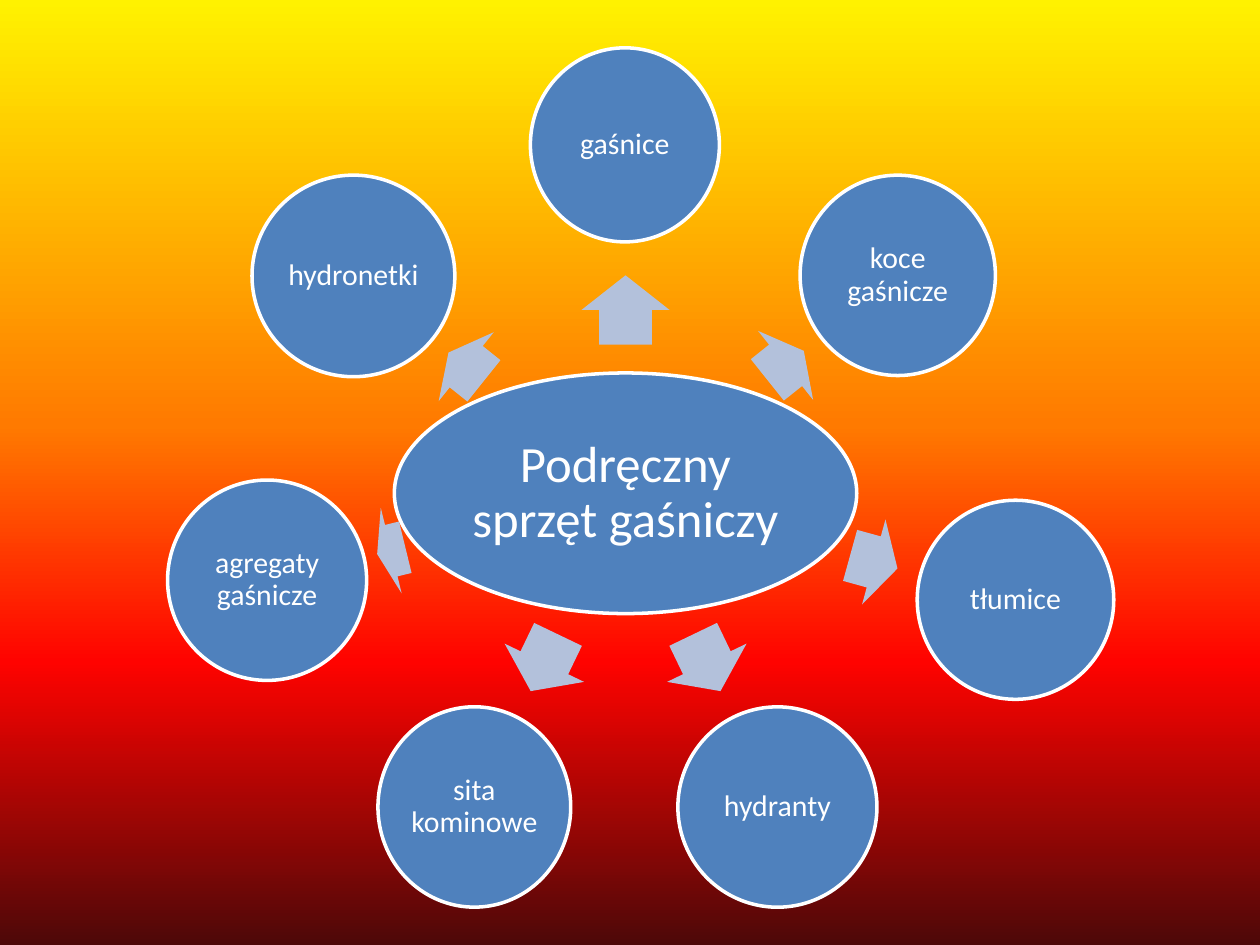
from typing import NamedTuple

from lxml import etree
from pptx import Presentation
from pptx import util as u
from pptx.dml.color import RGBColor
from pptx.enum import shapes, text
from pptx.oxml.ns import qn

BLUE = RGBColor(0x4F, 0x81, 0xBD)
PALE_BLUE = RGBColor(0xB3, 0xC1, 0xDB)
WHITE = RGBColor(0xFF, 0xFF, 0xFF)
FLAME = [
    (0, RGBColor(0xFF, 0xF2, 0x00)),
    (45, RGBColor(0xFF, 0x7A, 0x00)),
    (70, RGBColor(0xFF, 0x03, 0x00)),
    (100, RGBColor(0x4D, 0x08, 0x08)),
]
FONT = "Calibri"
ARROW_HEIGHT = 0.7


class Box(NamedTuple):
    left: float
    top: float
    width: float
    height: float


class Bubble(NamedTuple):
    label: str
    box: Box
    font_size: float = 17
    inset: float = 0.02


class Arrow(NamedTuple):
    left: float
    top: float
    length: float
    rotation: float


HUB = Bubble("Podręczny sprzęt gaśniczy", Box(3.13, 2.96, 3.67, 1.91), 29, 0.04)
SPOKES = [
    (Arrow(4.69, 2.11, 0.55, 270), Bubble("gaśnice", Box(4.21, 0.38, 1.5, 1.54))),
    (Arrow(6.05, 2.55, 0.37, 321.4), Bubble("koce gaśnicze", Box(6.35, 1.39, 1.55, 1.59))),
    (Arrow(6.74, 4.11, 0.39, 15.4), Bubble("tłumice", Box(7.28, 3.97, 1.56, 1.58))),
    (Arrow(5.36, 4.91, 0.5, 64.3), Bubble("hydranty", Box(5.38, 5.61, 1.58, 1.59))),
    (Arrow(4.07, 4.91, 0.5, 115.7), Bubble("sita kominowe", Box(3, 5.61, 1.53, 1.59))),
    (Arrow(2.99, 4.02, 0.23, 166.3), Bubble("agregaty gaśnicze", Box(1.33, 3.81, 1.58, 1.59))),
    (Arrow(3.52, 2.56, 0.36, 218.6), Bubble("hydronetki", Box(2, 1.39, 1.61, 1.6))),
]


def paint_background(slide) -> None:
    fill = slide.background.fill
    fill.gradient()
    fill.gradient_angle = 270
    stops = slide.element.find(".//" + qn("a:gsLst"))
    stops.clear()
    for percent, color in FLAME:
        stop = etree.SubElement(stops, qn("a:gs"), pos=str(percent * 1000))
        etree.SubElement(stop, qn("a:srgbClr"), val=str(color))


def add_filled_shape(slide, kind, box: Box, color: RGBColor):
    shape = slide.shapes.add_shape(kind, *map(u.Inches, box))
    shape.shadow.inherit = False
    shape.fill.solid()
    shape.fill.fore_color.rgb = color
    return shape


def add_bubble(slide, bubble: Bubble) -> None:
    shape = add_filled_shape(slide, shapes.MSO_SHAPE.OVAL, bubble.box, BLUE)
    shape.line.color.rgb = WHITE
    shape.line.width = u.Pt(2)

    frame = shape.text_frame
    frame.word_wrap = True
    frame.vertical_anchor = text.MSO_ANCHOR.MIDDLE
    frame.margin_left = frame.margin_right = u.Inches(bubble.inset)
    frame.margin_top = frame.margin_bottom = u.Inches(bubble.inset)
    paragraph = frame.paragraphs[0]
    paragraph.alignment = text.PP_ALIGN.CENTER
    paragraph.line_spacing = 0.9
    run = paragraph.add_run()
    run.text = bubble.label
    run.font.name = FONT
    run.font.size = u.Pt(bubble.font_size)
    run.font.color.rgb = WHITE


def add_arrow(slide, arrow: Arrow) -> None:
    box = Box(arrow.left, arrow.top, arrow.length, ARROW_HEIGHT)
    shape = add_filled_shape(slide, shapes.MSO_SHAPE.RIGHT_ARROW, box, PALE_BLUE)
    shape.line.fill.background()
    shape.adjustments[0] = 0.6
    shape.adjustments[1] = 0.5
    shape.rotation = arrow.rotation


def main() -> None:
    presentation = Presentation()
    presentation.slide_width = u.Inches(10)
    presentation.slide_height = u.Inches(7.5)
    slide = presentation.slides.add_slide(presentation.slide_layouts[6])

    paint_background(slide)
    add_bubble(slide, HUB)
    for arrow, bubble in SPOKES:
        add_arrow(slide, arrow)
        add_bubble(slide, bubble)

    presentation.save("out.pptx")


if __name__ == "__main__":
    main()
